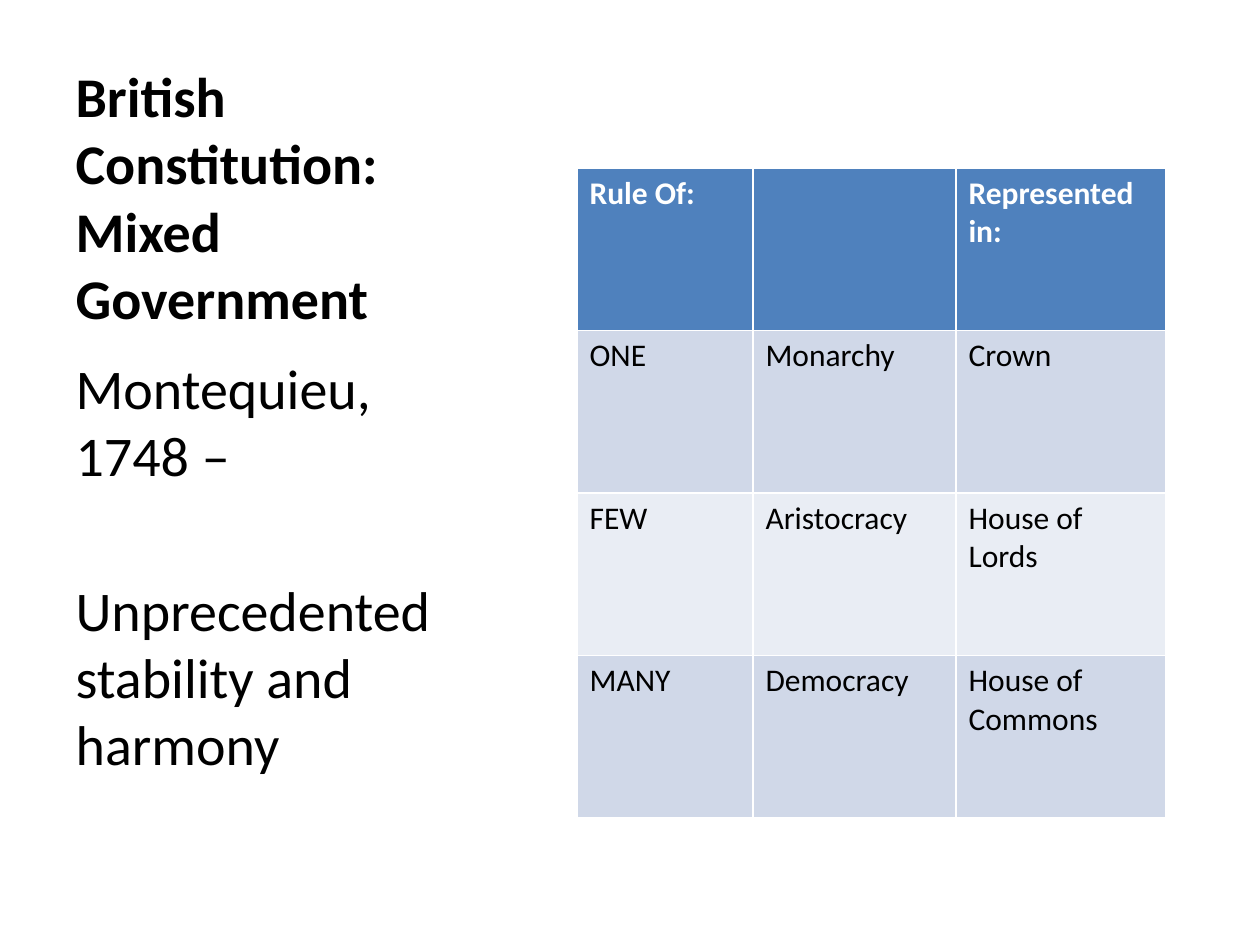
from dataclasses import dataclass

from pptx import Presentation
from pptx.dml.color import RGBColor
from pptx.enum.text import MSO_ANCHOR, MSO_AUTO_SIZE, PP_ALIGN
from pptx.util import Pt

BOTTOM = MSO_ANCHOR.BOTTOM
TOP = MSO_ANCHOR.TOP
NO_AUTOFIT = MSO_AUTO_SIZE.NONE
LEFT = PP_ALIGN.LEFT
EMU_PER_PX = 914400 / 126


@dataclass(frozen=True)
class Theme:
    font: str = "Calibri"
    ink: str = "000000"
    header_ink: str = "FFFFFF"
    header_fill: str = "4F81BD"
    band_fills: tuple = ("D0D8E8", "E9EDF4")
    caption_size: int = 32
    table_size: int = 18
    statement_gap: int = 50


THEME = Theme()
TITLE = "British Constitution: Mixed Government"
STATEMENTS = ["Montequieu, 1748 –", "Unprecedented stability and harmony"]
GOVERNMENT = [
    ["Rule Of:", "", "Represented in:"],
    ["ONE", "Monarchy", "Crown"],
    ["FEW", "Aristocracy", "House of Lords"],
    ["MANY", "Democracy", "House of Commons"],
]
COLUMN_WIDTHS = [176, 203, 210]


def px(length):
    return round(length * EMU_PER_PX)


def write(paragraph, text, size, color=THEME.ink, bold=False, before=0):
    paragraph.alignment = LEFT
    paragraph.space_before = Pt(before)
    run = paragraph.add_run()
    run.text = text
    run.font.name = THEME.font
    run.font.size = Pt(size)
    run.font.bold = bold
    run.font.color.rgb = RGBColor.from_string(color)


def place(placeholder, left, top, width, height, anchor):
    placeholder.left, placeholder.top = px(left), px(top)
    placeholder.width, placeholder.height = px(width), px(height)
    frame = placeholder.text_frame
    frame.word_wrap = True
    frame.auto_size = NO_AUTOFIT
    frame.vertical_anchor = anchor
    return frame


def add_caption(slide, left, top, width, height):
    title_height, gap = 299, 10
    heading = place(slide.shapes.title, left, top, width, title_height, BOTTOM)
    write(heading.paragraphs[0], TITLE, THEME.caption_size, bold=True)

    body_offset = title_height + gap
    body = place(slide.placeholders[2], left, top + body_offset, width,
                 height - body_offset, TOP)
    for index, statement in enumerate(STATEMENTS):
        paragraph = body.add_paragraph() if index else body.paragraphs[0]
        write(paragraph, statement, THEME.caption_size,
              before=THEME.statement_gap if index else 0)


def add_government_table(slide, left, top, width, height):
    table = slide.shapes.add_table(
        len(GOVERNMENT), len(COLUMN_WIDTHS),
        px(left), px(top), px(width), px(height)).table
    for column, share in zip(table.columns, COLUMN_WIDTHS):
        column.width = px(width * share / sum(COLUMN_WIDTHS))
    for row_index, labels in enumerate(GOVERNMENT):
        header = row_index == 0
        fill = THEME.header_fill if header else THEME.band_fills[(row_index - 1) % 2]
        for column_index, label in enumerate(labels):
            cell = table.cell(row_index, column_index)
            cell.fill.solid()
            cell.fill.fore_color.rgb = RGBColor.from_string(fill)
            if label:
                write(cell.text_frame.paragraphs[0], label, THEME.table_size,
                      color=THEME.header_ink if header else THEME.ink, bold=header)


def main():
    presentation = Presentation()
    presentation.slide_width, presentation.slide_height = px(1260), px(945)
    slide = presentation.slides.add_slide(presentation.slide_layouts[7])
    content = slide.placeholders[1].element
    content.getparent().remove(content)
    add_government_table(slide, 577, 168, 589, 650)
    add_caption(slide, 63, 38, 415, 806)
    presentation.save("out.pptx")


if __name__ == "__main__":
    main()
